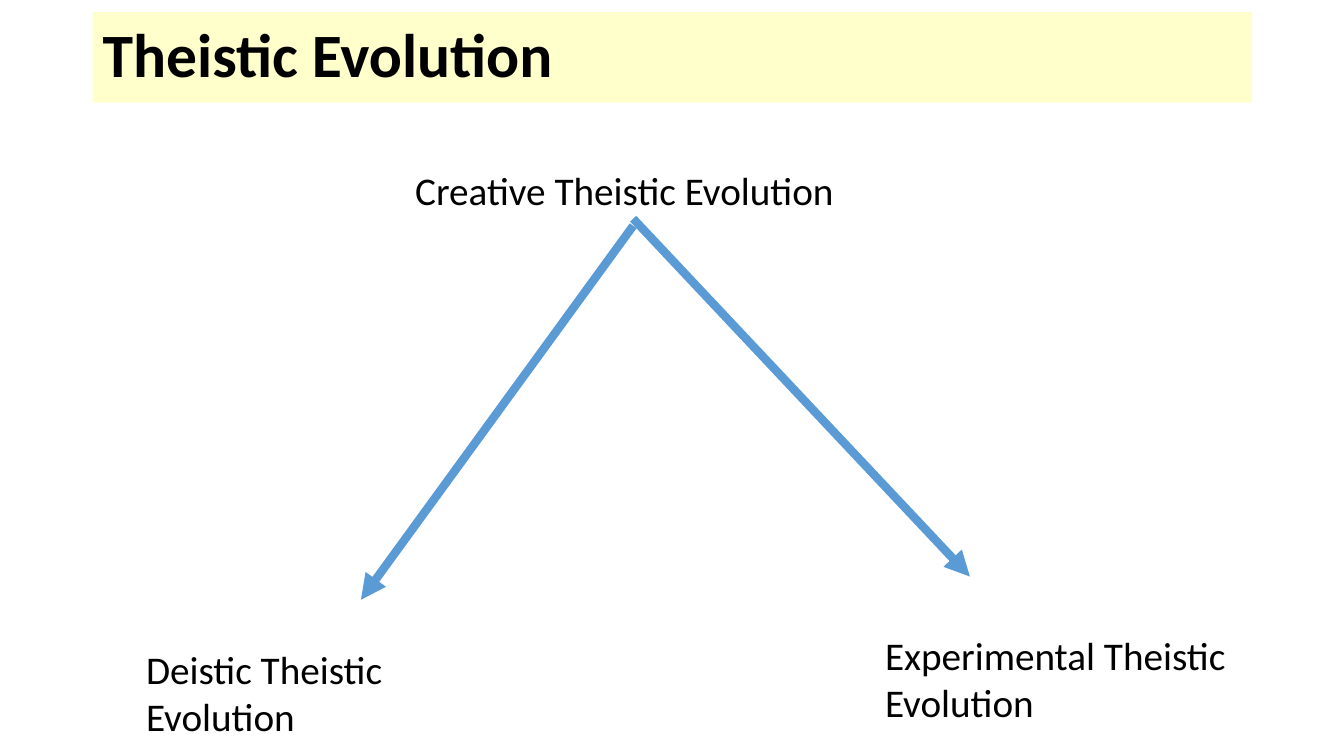
from pptx import Presentation
from pptx.dml.color import RGBColor
from pptx.enum.shapes import MSO_CONNECTOR
from pptx.enum.text import MSO_ANCHOR
from pptx.oxml.ns import qn
from pptx.util import Inches, Pt
from lxml import etree

STRAIGHT = MSO_CONNECTOR.STRAIGHT
TOP, MIDDLE = MSO_ANCHOR.TOP, MSO_ANCHOR.MIDDLE
COLORS = {"text": "000000", "banner": "FFFFCC", "arrow": "5B9BD5"}


def rgb(name):
    return RGBColor.from_string(COLORS[name])


def write(tf, text, size=28, bold=False, anchor=TOP, spacing=1.0):
    tf.word_wrap = True
    tf.vertical_anchor = anchor
    p = tf.paragraphs[0]
    p.line_spacing = spacing
    r = p.add_run()
    r.text = text
    r.font.name = "Calibri"
    r.font.size = Pt(size)
    r.font.bold = bold
    r.font.color.rgb = rgb("text")


class Diagram:
    """Draws the titled tree of views on one slide."""

    def __init__(self, slide):
        self.s = slide

    def label(self, text, x, y, w, h, fill=None, **fmt):
        sp = self.s.shapes.add_textbox(Inches(x), Inches(y), Inches(w), Inches(h))
        if fill:
            sp.fill.solid()
            sp.fill.fore_color.rgb = rgb(fill)
        write(sp.text_frame, text, **fmt)

    def arrow(self, x1, y1, x2, y2):
        c = self.s.shapes.add_connector(
            STRAIGHT, Inches(x1), Inches(y1), Inches(x2), Inches(y2))
        c.line.color.rgb = rgb("arrow")
        c.line.width = Pt(6)
        etree.SubElement(c.line._get_or_add_ln(), qn("a:tailEnd"), type="triangle")
        etree.SubElement(c._element.spPr, qn("a:effectLst"))


def main():
    prs = Presentation()
    prs.slide_width, prs.slide_height = Inches(13.33), Inches(7.5)
    d = Diagram(prs.slides.add_slide(prs.slide_layouts[6]))
    d.label("Theistic Evolution", 0.92, 0.12, 11.5, 0.9, fill="banner",
            size=44, bold=True, anchor=MIDDLE, spacing=0.9)
    d.label("Creative Theistic Evolution", 4.02, 1.6, 4.66, 0.57)
    d.label("Deistic Theistic Evolution", 1.35, 6.35, 3.08, 1.04)
    d.label("Experimental Theistic Evolution", 8.68, 6.21, 3.73, 1.04)
    d.arrow(6.28, 2.17, 9.62, 5.72)
    d.arrow(6.28, 2.24, 3.58, 5.95)
    prs.save("out.pptx")


if __name__ == "__main__":
    main()
